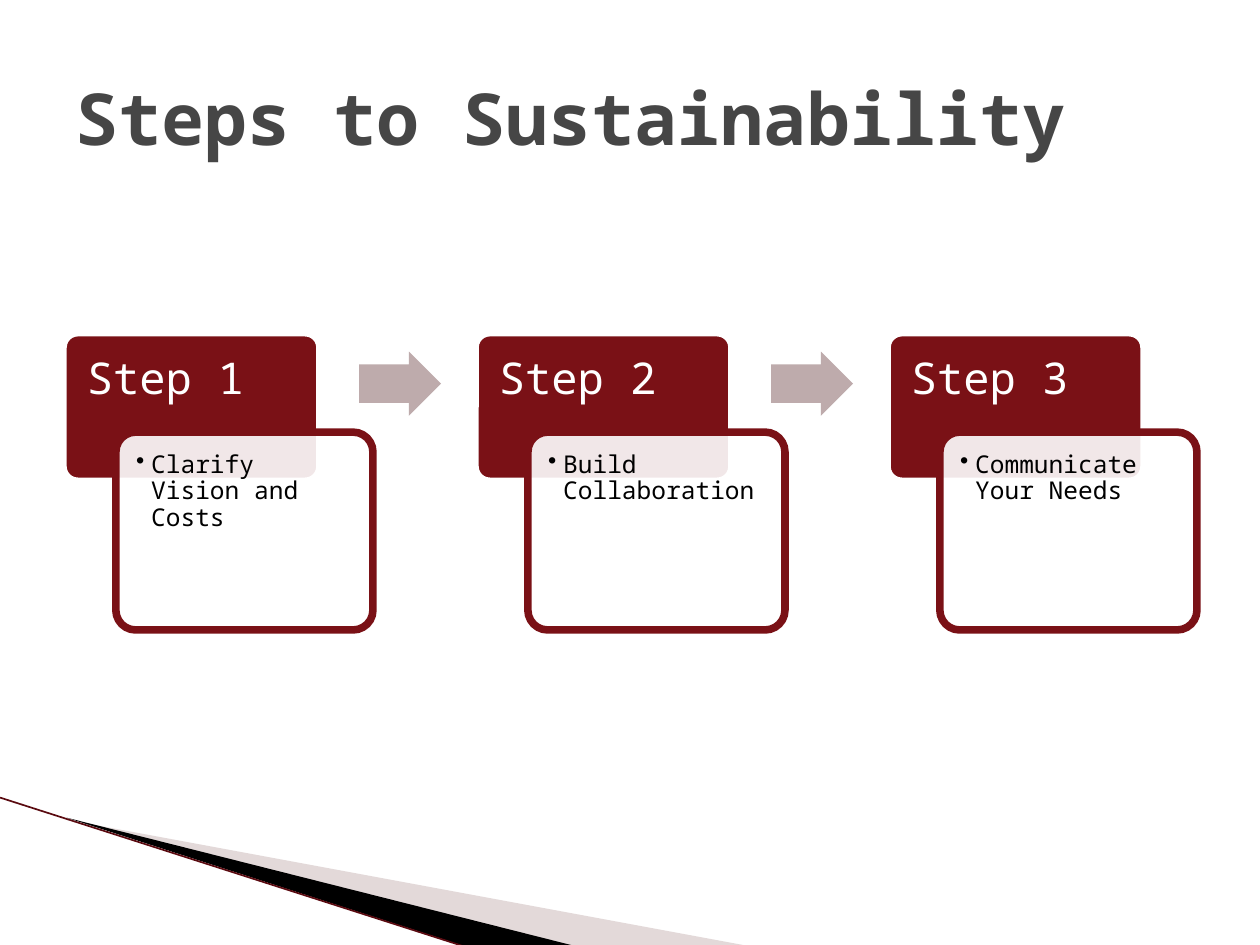
from lxml import etree
from pptx import Presentation
from pptx.dml.color import RGBColor
from pptx.enum.shapes import MSO_CONNECTOR, MSO_SHAPE
from pptx.enum.text import MSO_ANCHOR, PP_ALIGN
from pptx.oxml.ns import qn
from pptx.util import Inches, Pt

FONT = "Noto Sans Mono"
DARK_RED, WHITE, BLACK = "7A1116", "FFFFFF", "000000"
STEPS = ["Clarify Vision and Costs", "Build Collaboration", "Communicate Your Needs"]
STEP_PITCH = 3.27


def color(hex_value):
    return RGBColor.from_string(hex_value)


def style_shape(shape, fill, line=None, opacity=100):
    shape.shadow.inherit = False
    shape.fill.solid()
    shape.fill.fore_color.rgb = color(fill)
    if opacity < 100:
        fill_color = shape.fill._xPr.find(qn("a:solidFill"))[0]
        etree.SubElement(fill_color, qn("a:alpha"), val=str(opacity * 1000))
    if line:
        shape.line.color.rgb = color(line)
        shape.line.width = Pt(4.33)
    else:
        shape.line.fill.background()


def add_block(slide, kind, box, adjustments, **style):
    shape = slide.shapes.add_shape(kind, *map(Inches, box))
    for index, value in enumerate(adjustments):
        shape.adjustments[index] = value
    style_shape(shape, **style)


def add_text(slide, box, text, font, insets, anchor=MSO_ANCHOR.TOP,
             line_spacing=None, bullet=False):
    frame = slide.shapes.add_textbox(*map(Inches, box)).text_frame
    frame.word_wrap = True
    frame.vertical_anchor = anchor
    for side, inset in zip(("left", "top", "right", "bottom"), insets):
        setattr(frame, f"margin_{side}", Inches(inset))
    paragraph = frame.paragraphs[0]
    paragraph.text = text
    paragraph.alignment = PP_ALIGN.LEFT
    if line_spacing:
        paragraph.line_spacing = line_spacing
    if bullet:
        properties = paragraph._p.get_or_add_pPr()
        properties.set("marL", str(Inches(0.12)))
        properties.set("indent", str(-Inches(0.12)))
        etree.SubElement(properties, qn("a:buChar"), char="•")
    run_font = paragraph.runs[0].font
    run_font.color.rgb = color(font["color"])
    for name, value in {"name": FONT, "size": Pt(font["size"]),
                        "bold": font.get("bold", False)}.items():
        setattr(run_font, name, value)


def add_corner_sweep(slide, left, top):
    """Wedges and edge line, placed from the top left end of the sweep."""
    wedges = [
        ([(0.55, 0.18), (5.95, 1.18), (4.56, 1.18)], "B9A0A0", 40),
        ([(0.53, 0.16), (4.57, 1.18), (3.72, 1.19)], BLACK, 100),
    ]
    for points, fill, opacity in wedges:
        corners = [(Inches(left + x), Inches(top + y)) for x, y in points]
        builder = slide.shapes.build_freeform(*corners[0])
        builder.add_line_segments(corners[1:], close=True)
        style_shape(builder.convert_to_shape(), fill, opacity=opacity)

    edge = slide.shapes.add_connector(
        MSO_CONNECTOR.STRAIGHT, Inches(left), Inches(top),
        Inches(left + 3.71), Inches(top + 1.19))
    edge.line.color.rgb = color("5A0A10")
    edge.line.width = Pt(0.95)
    etree.SubElement(edge._element.spPr, qn("a:effectLst"))


def add_step(slide, left, top, heading, detail):
    # Heading card
    add_block(slide, MSO_SHAPE.ROUNDED_RECTANGLE, (left, top, 2.04, 1.18),
              [0.1], fill=DARK_RED, line=WHITE)
    add_text(slide, (left, top, 2.04, 0.79), heading,
             {"size": 25, "color": WHITE}, (0.19, 0.19, 0.19, 0.1),
             line_spacing=0.9)
    # Detail card overlapping the heading card
    add_block(slide, MSO_SHAPE.ROUNDED_RECTANGLE,
              (left + 0.42, top + 0.79, 2.04, 1.57),
              [0.1], fill=WHITE, line=DARK_RED, opacity=90)
    add_text(slide, (left + 0.47, top + 0.84, 1.94, 1.48), detail,
             {"size": 14, "color": BLACK}, (0.11,) * 4,
             line_spacing=0.9, bullet=True)


def add_process(slide, left, top):
    for index, detail in enumerate(STEPS):
        step_left = left + index * STEP_PITCH
        add_step(slide, step_left, top, f"Step {index + 1}", detail)
        if index < len(STEPS) - 1:
            add_block(slide, MSO_SHAPE.RIGHT_ARROW,
                      (step_left + 2.35, top + 0.15, 0.65, 0.51),
                      [0.6, 0.5], fill="BEABAC")


def main():
    presentation = Presentation()
    presentation.slide_width, presentation.slide_height = Inches(10), Inches(7.5)
    slide = presentation.slides.add_slide(presentation.slide_layouts[6])

    add_corner_sweep(slide, 0, 6.33)
    add_process(slide, 0.5, 2.64)
    # Title
    add_text(slide, (0.5, 0.3, 9, 1.25), "Steps to Sustainability",
             {"size": 41, "color": "464646", "bold": True},
             (0.1, 0.05, 0.1, 0.05), anchor=MSO_ANCHOR.MIDDLE)
    presentation.save("out.pptx")


if __name__ == "__main__":
    main()
